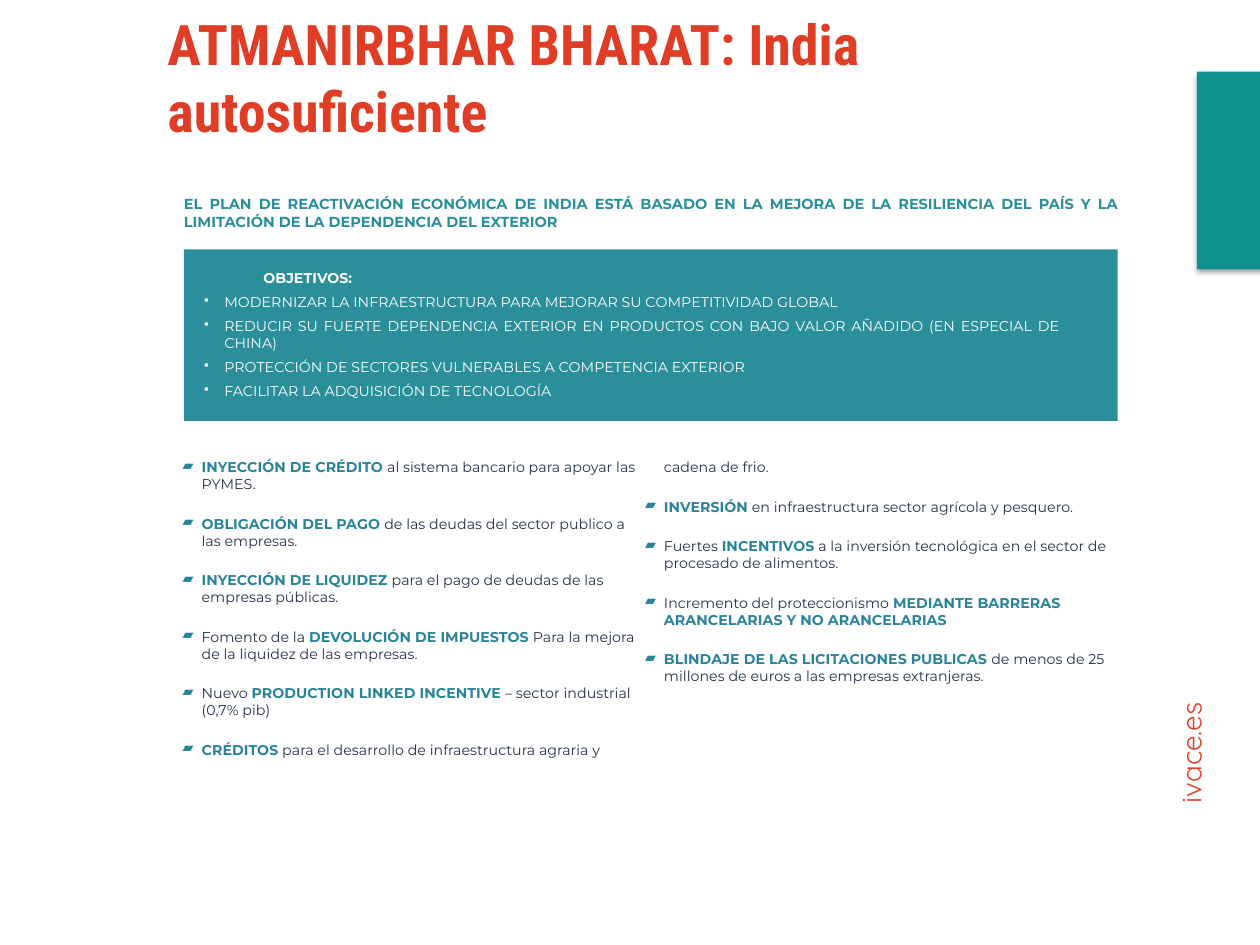
from dataclasses import dataclass
from lxml.etree import SubElement
from pptx import Presentation
from pptx.dml.color import RGBColor
from pptx.enum.shapes import MSO_SHAPE as Shape
from pptx.enum.text import MSO_ANCHOR as Anchor, PP_ALIGN as Align
from pptx.oxml.ns import qn
from pptx.util import Pt

RED = RGBColor(0xDF, 0x3D, 0x26)
CORAL = RGBColor(0xE0, 0x43, 0x2B)
TEAL = RGBColor(0x2A, 0x8F, 0x9A)
GREEN = RGBColor(0x0F, 0x91, 0x90)
BLUE = RGBColor(0x29, 0x83, 0x9B)
NAVY = RGBColor(0x26, 0x32, 0x48)
WHITE = RGBColor(0xFF, 0xFF, 0xFF)
BODY = "Montserrat"


@dataclass
class Box:
    x: float
    y: float
    w: float
    h: float

    def place(self) -> tuple:
        return Pt(self.x), Pt(self.y), Pt(self.w), Pt(self.h)


@dataclass
class Style:
    face: str
    size: float
    color: RGBColor
    bold: bool = False
    align: Align = Align.LEFT


@dataclass
class Bullet:
    char: str
    left: float
    hang: float
    color: RGBColor


def add_rect(slide, box: Box, fill: RGBColor):
    rect = slide.shapes.add_shape(Shape.RECTANGLE, *box.place())
    rect.shadow.inherit = False
    rect.fill.solid()
    rect.fill.fore_color.rgb = fill
    rect.line.fill.background()
    return rect


def add_glow(rect, blur: float, dist: float, alpha: int) -> None:
    """Soft black shadow below the shape."""
    effects = rect.element.spPr.find(qn("a:effectLst"))
    glow = SubElement(effects, qn("a:outerShdw"), blurRad=str(Pt(blur)),
                      dist=str(Pt(dist)), dir="5400000", rotWithShape="0")
    tone = SubElement(glow, qn("a:srgbClr"), val="000000")
    SubElement(tone, qn("a:alpha"), val=str(alpha * 1000))


def add_box(slide, box: Box, side: float = 7.2, top: float = 3.6,
            anchor: Anchor = Anchor.TOP):
    shape = slide.shapes.add_textbox(*box.place())
    frame = shape.text_frame
    frame.word_wrap = True
    frame.vertical_anchor = anchor
    frame.margin_left = frame.margin_right = Pt(side)
    frame.margin_top = frame.margin_bottom = Pt(top)
    return shape


def set_style(para, style: Style) -> None:
    para.alignment = style.align
    font = para.font
    font.name, font.size, font.bold = style.face, Pt(style.size), style.bold
    font.color.rgb = style.color


def set_bullet(para, mark: Bullet) -> None:
    props = para._p.get_or_add_pPr()
    props.set("marL", str(Pt(mark.left)))
    props.set("indent", str(Pt(-mark.hang)))
    tone = SubElement(props, qn("a:buClr"))
    SubElement(tone, qn("a:srgbClr"), val=str(mark.color))
    SubElement(props, qn("a:buChar"), char=mark.char)


def add_line(slide, box: Box, text: str, style: Style, **layout):
    shape = add_box(slide, box, **layout)
    para = shape.text_frame.paragraphs[0]
    para.text = text
    set_style(para, style)
    return shape


def add_items(frame, items: list[str], style: Style, mark: Bullet,
              before: float, after: float) -> None:
    """One bullet per item; words between asterisks are bold and blue."""
    for item in items:
        first = not frame.paragraphs[0].runs
        para = frame.paragraphs[0] if first else frame.add_paragraph()
        para.space_before = Pt(0 if first else before)
        para.space_after = Pt(after)
        set_bullet(para, mark)
        set_style(para, style)
        for i, part in enumerate(item.split("*")):
            if part:
                run = para.add_run()
                run.text = part
                if i % 2:
                    run.font.bold = True
                    run.font.color.rgb = BLUE


GOALS = [
    "MODERNIZAR LA INFRAESTRUCTURA PARA MEJORAR SU COMPETITIVIDAD GLOBAL",
    "REDUCIR SU FUERTE DEPENDENCIA EXTERIOR EN PRODUCTOS CON BAJO VALOR "
    "AÑADIDO (EN ESPECIAL DE CHINA)",
    "PROTECCIÓN DE SECTORES VULNERABLES A COMPETENCIA EXTERIOR",
    "FACILITAR LA ADQUISICIÓN DE TECNOLOGÍA",
]
PLANS = [
    "*INYECCIÓN DE CRÉDITO *al sistema bancario para apoyar las PYMES.",
    "*OBLIGACIÓN DEL PAGO *de las deudas del sector publico a las empresas.",
    "*INYECCIÓN DE LIQUIDEZ *para el pago de deudas de las empresas públicas.",
    "Fomento de la *DEVOLUCIÓN DE IMPUESTOS *Para la mejora de la liquidez "
    "de las empresas.",
    "Nuevo *PRODUCTION LINKED INCENTIVE *– sector industrial (0,7% pib)",
    "*CRÉDITOS* para el desarrollo de infraestructura agraria y cadena de frio.",
    "*INVERSIÓN* en infraestructura sector agrícola y pesquero.",
    "Fuertes *INCENTIVOS* a la inversión tecnológica en el sector de "
    "procesado de alimentos.",
    "Incremento del proteccionismo *MEDIANTE BARRERAS ARANCELARIAS Y NO "
    "ARANCELARIAS*",
    "*BLINDAJE DE LAS LICITACIONES PUBLICAS *de menos de 25 millones de euros "
    "a las empresas extranjeras.",
]


def main() -> None:
    deck = Presentation()
    deck.slide_width, deck.slide_height = Pt(720), Pt(540)
    slide = deck.slides.add_slide(deck.slide_layouts[6])

    # Side web address
    site = add_line(slide, Box(608.4, 353.5, 171.4, 54), "ivace.es",
                    Style("Quicksand", 16, CORAL))
    site.rotation = 270

    # Title and lead
    add_line(slide, Box(88.6, 34.6, 589, 51.1),
             "ATMANIRBHAR BHARAT: India autosuficiente",
             Style("Roboto Condensed", 32, RED, True), anchor=Anchor.BOTTOM)
    add_line(slide, Box(105.1, 111.6, 533.5, 20.2),
             "EL PLAN DE REACTIVACIÓN ECONÓMICA DE INDIA ESTÁ BASADO EN LA "
             "MEJORA DE LA RESILIENCIA DEL PAÍS Y LA LIMITACIÓN DE LA "
             "DEPENDENCIA DEL EXTERIOR",
             Style(BODY, 8.3, TEAL, True, Align.JUSTIFY), side=0, top=0)

    # Goals panel
    add_rect(slide, Box(105.1, 142.5, 533.5, 98), TEAL)
    goals = add_line(slide, Box(114.5, 143.3, 491, 97), "OBJETIVOS:",
                     Style(BODY, 8.1, WHITE, True), side=0, top=10.6)
    head = goals.text_frame.paragraphs[0]
    head._p.get_or_add_pPr().set("marL", str(Pt(36)))
    head.space_after = Pt(2)
    add_items(goals.text_frame, GOALS,
              Style(BODY, 8.1, WHITE, align=Align.JUSTIFY),
              Bullet("•", 13.7, 11.5, WHITE), 2, 2)

    # Measures in two columns
    plans = add_box(slide, Box(101.5, 259.2, 534.2, 178.6), side=2.9, top=2.9)
    plans.element.txBody.bodyPr.set("numCol", "2")
    add_items(plans.text_frame, PLANS, Style(BODY, 8.1, NAVY),
              Bullet("▰", 10.8, 10.8, BLUE), 5.3, 7.5)

    # Edge tab
    tab = add_rect(slide, Box(684, 41, 43.2, 113), GREEN)
    add_glow(tab, 3.1, 1.8, 35)

    deck.save("out.pptx")


if __name__ == "__main__":
    main()
